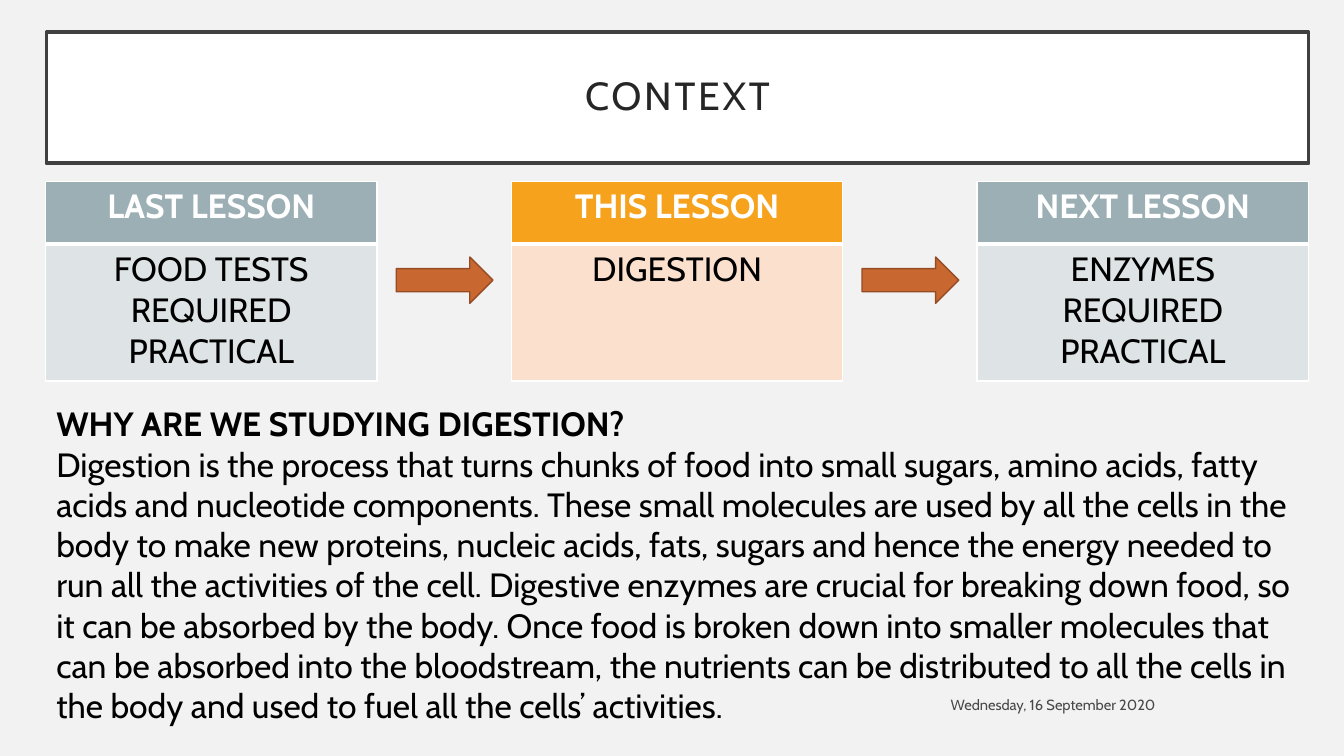
from lxml.etree import SubElement
from pptx import Presentation
from pptx.dml.color import RGBColor
from pptx.enum.shapes import MSO_SHAPE
from pptx.enum.text import MSO_ANCHOR, MSO_AUTO_SIZE, PP_ALIGN
from pptx.oxml.ns import qn
from pptx.util import Inches, Pt

BLACK = RGBColor(0, 0, 0)
WHITE = RGBColor(0xFF, 0xFF, 0xFF)
PAPER = RGBColor(0xF2, 0xF2, 0xF2)
FRAME = RGBColor(0x40, 0x40, 0x40)
INK = RGBColor(0x26, 0x26, 0x26)
SLATE = RGBColor(0x9B, 0xAF, 0xB5)
MIST = RGBColor(0xDE, 0xE3, 0xE5)
AMBER = RGBColor(0xF6, 0xA2, 0x1D)
PEACH = RGBColor(0xFB, 0xE0, 0xCD)
RUST = RGBColor(0xC9, 0x67, 0x31)
BROWN = RGBColor(0x95, 0x4C, 0x24)

LESSONS = [
    ("LAST LESSON", "FOOD TESTS REQUIRED PRACTICAL", SLATE, MIST),
    ("THIS LESSON", "DIGESTION", AMBER, PEACH),
    ("NEXT LESSON", "ENZYMES REQUIRED PRACTICAL", SLATE, MIST),
]
STEP = 4.62
REASON = (
    "Digestion is the process that turns chunks of food into small sugars, "
    "amino acids, fatty acids and nucleotide components. These small molecules "
    "are used by all the cells in the body to make new proteins, nucleic acids, "
    "fats, sugars and hence the energy needed to run all the activities of the "
    "cell. Digestive enzymes are crucial for breaking down food, so it can be "
    "absorbed by the body. Once food is broken down into smaller molecules that "
    "can be absorbed into the bloodstream, the nutrients can be distributed to "
    "all the cells in the body and used to fuel all the cells’ activities."
)


def apply(target, values):
    for name, value in values.items():
        setattr(target, name, value)


def write(para, text, size=24, color=BLACK, bold=False, align=PP_ALIGN.LEFT):
    para.alignment = align
    run = para.add_run()
    run.text = text
    apply(run.font, {"name": "Cabin", "size": Pt(size), "bold": bold})
    run.font.color.rgb = color
    return run


def add_box(slide, kind, place, fill, line, width):
    box = slide.shapes.add_shape(kind, *map(Inches, place))
    box.shadow.inherit = False
    box.fill.solid()
    box.fill.fore_color.rgb = fill
    box.line.color.rgb = line
    box.line.width = Pt(width)
    return box


def add_text(slide, place, **values):
    frame = slide.shapes.add_textbox(*map(Inches, place)).text_frame
    apply(frame, {"word_wrap": True, **values})
    return frame


def add_edges(cell, **widths):
    props = cell._tc.get_or_add_tcPr()
    for side in "LRTB":
        width = Pt(widths.get(side, 1))
        edge = SubElement(props, qn(f"a:ln{side}"), w=str(width))
        fill = SubElement(edge, qn("a:solidFill"))
        SubElement(fill, qn("a:srgbClr"), val=str(WHITE))


def fill_cell(cell, text, fill, color, bold, **widths):
    add_edges(cell, **widths)
    cell.fill.solid()
    cell.fill.fore_color.rgb = fill
    write(cell.text_frame.paragraphs[0], text, 24, color, bold, PP_ALIGN.CENTER)


def add_lesson(slide, left, head, topic, dark, light):
    place = map(Inches, (left, 1.8, 3.29, 1.98))
    table = slide.shapes.add_table(2, 1, *place).table
    table.horz_banding = False
    for row, height in zip(table.rows, (0.62, 1.36)):
        row.height = Inches(height)
    fill_cell(table.cell(0, 0), head, dark, WHITE, True, B=3)
    fill_cell(table.cell(1, 0), topic, light, BLACK, False, T=3)


def add_title(slide):
    box = add_box(slide, MSO_SHAPE.RECTANGLE, (0.46, 0.32, 12.52, 1.3), WHITE, FRAME, 2.5)
    frame = box.text_frame
    sides = ("left", "top", "right", "bottom")
    apply(frame, {f"margin_{side}": Inches(0.2) for side in sides})
    apply(frame, {"vertical_anchor": MSO_ANCHOR.MIDDLE, "word_wrap": True})
    para = frame.paragraphs[0]
    para.line_spacing = 0.9
    run = write(para, "CONTEXT", 28, INK, align=PP_ALIGN.CENTER)
    run.font._element.set("spc", "200")


def add_date(slide):
    frame = add_text(slide, (8.55, 6.82, 3.01, 0.35), vertical_anchor=MSO_ANCHOR.MIDDLE)
    run = write(frame.paragraphs[0], "Wednesday, 16 September 2020", 10.5, align=PP_ALIGN.RIGHT)
    color = run.font._element.find(".//" + qn("a:srgbClr"))
    SubElement(color, qn("a:alpha"), val="70000")


def add_reason(slide):
    frame = add_text(slide, (0.46, 3.95, 12.52, 3.33), auto_size=MSO_AUTO_SIZE.SHAPE_TO_FIT_TEXT)
    write(frame.paragraphs[0], "WHY ARE WE STUDYING DIGESTION?", bold=True)
    write(frame.add_paragraph(), REASON)


def main():
    deck = Presentation()
    apply(deck, {"slide_width": Inches(13.33), "slide_height": Inches(7.5)})
    slide = deck.slides.add_slide(deck.slide_layouts[6])
    slide.background.fill.solid()
    slide.background.fill.fore_color.rgb = PAPER
    add_title(slide)
    add_date(slide)
    for index, lesson in enumerate(LESSONS):
        add_lesson(slide, 0.45 + index * STEP, *lesson)
    for index in range(len(LESSONS) - 1):
        place = (3.93 + index * STEP, 2.55, 0.96, 0.46)
        add_box(slide, MSO_SHAPE.RIGHT_ARROW, place, RUST, BROWN, 1)
    add_reason(slide)
    deck.save("out.pptx")


if __name__ == "__main__":
    main()
